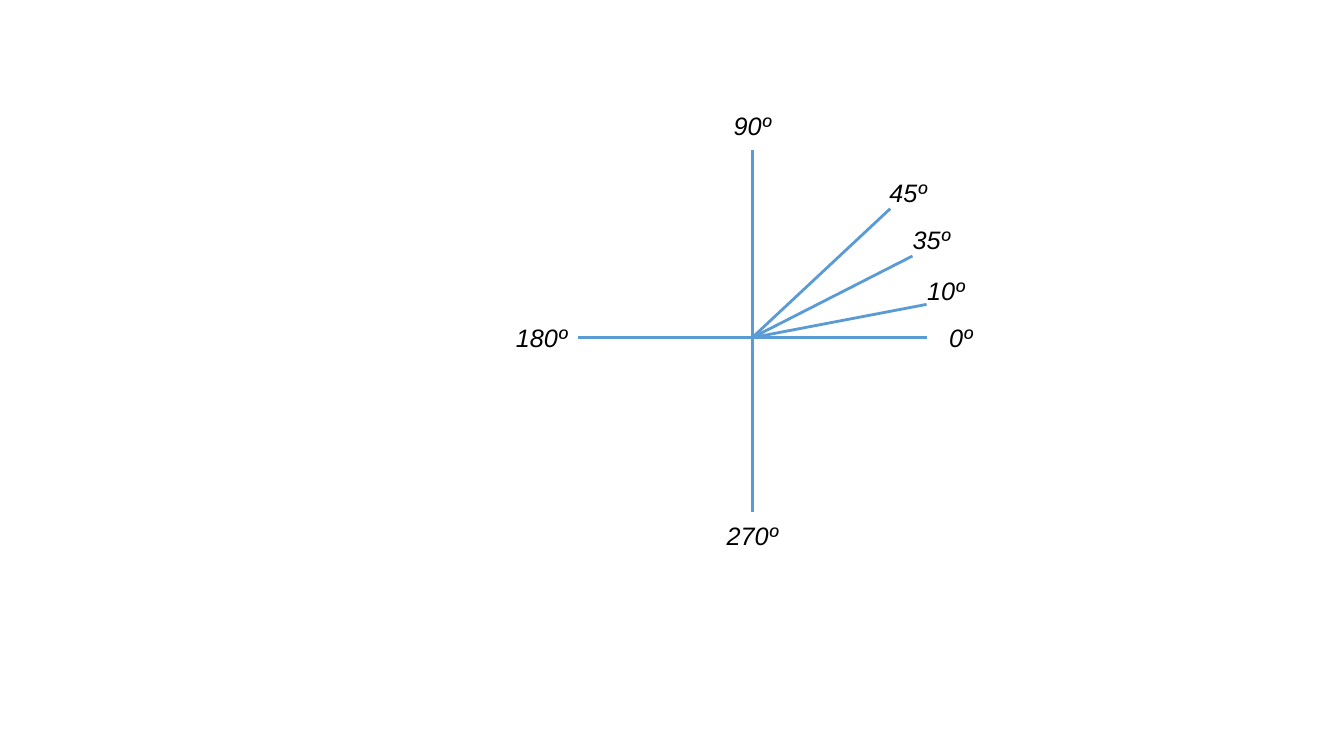
from lxml import etree
from pptx import Presentation
from pptx import util as u
from pptx.dml.color import RGBColor
from pptx.enum import shapes, text
from pptx.oxml.ns import qn

COLORS = {"line": "5B9BD5", "text": "000000"}
LABEL_FONT = {"name": "Arial", "size": u.Pt(18), "italic": True}
LABEL_HEIGHT = 0.4
ORIGIN = (7.46, 3.35)
WEST, EAST = 5.73, 9.19

prs = Presentation()
prs.slide_width, prs.slide_height = u.Inches(13.33), u.Inches(7.5)
s = prs.slides.add_slide(prs.slide_layouts[6])

# Two axes, then the rays at 45º, 10º and 35º
lines = [
    ((ORIGIN[0], 1.49), (ORIGIN[0], 5.08)),
    ((WEST, ORIGIN[1]), (EAST, ORIGIN[1])),
    (ORIGIN, (8.83, 2.07)),
    (ORIGIN, (EAST, 3.02)),
    ((7.5, 3.33), (9.05, 2.54)),
]
for start, end in lines:
    ends = [u.Inches(v) for v in start + end]
    line = s.shapes.add_connector(shapes.MSO_CONNECTOR.STRAIGHT, *ends)
    line.line.color.rgb = RGBColor.from_string(COLORS["line"])
    line.line.width = u.Pt(2)
    etree.SubElement(line._element.spPr, qn("a:effectLst"))

# Angle, left, top, width, wrap
labels = [
    (90, 7.17, 1.05, 0.58, False),
    (0, 9.31, 3.15, 0.44, False),
    (270, 7.1, 5.11, 0.72, False),
    (180, 5.01, 3.15, 0.72, False),
    (10, 9.09, 2.68, 0.58, False),
    (35, 8.93, 2.18, 0.61, True),
    (45, 8.7, 1.71, 0.61, True),
]
for angle, left, top, width, wrap in labels:
    box = [u.Inches(v) for v in (left, top, width, LABEL_HEIGHT)]
    tf = s.shapes.add_textbox(*box).text_frame
    tf.word_wrap = wrap
    tf.auto_size = text.MSO_AUTO_SIZE.SHAPE_TO_FIT_TEXT
    p = tf.paragraphs[0]
    p.alignment = text.PP_ALIGN.CENTER
    r = p.add_run()
    r.text = f"{angle}º"
    for name, value in LABEL_FONT.items():
        setattr(r.font, name, value)
    r.font.color.rgb = RGBColor.from_string(COLORS["text"])

prs.save("out.pptx")
